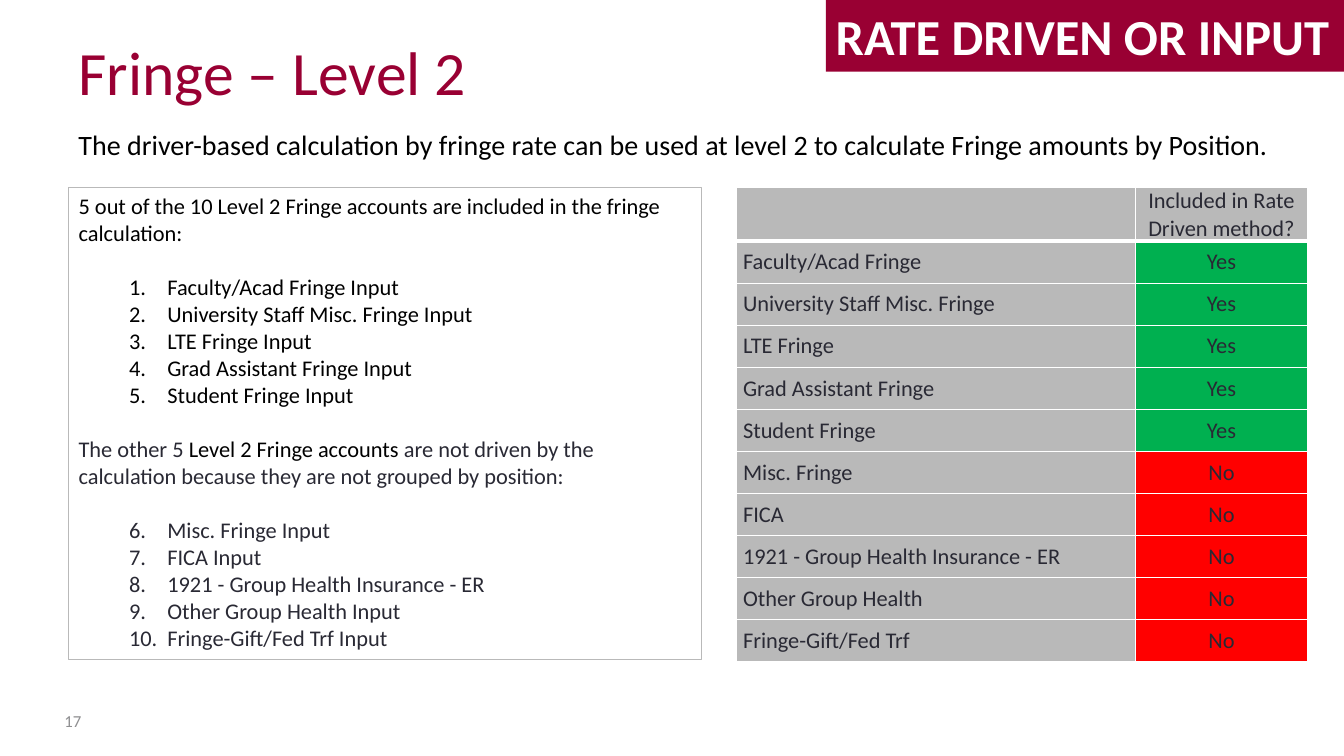
import pptx
import pptx.util
from dataclasses import dataclass
from lxml import etree
from pptx.dml.color import RGBColor
from pptx.enum.shapes import MSO_SHAPE
from pptx.enum.text import MSO_ANCHOR, MSO_AUTO_SIZE, PP_ALIGN
from pptx.oxml.ns import qn
from pptx.util import Inches, Pt


@dataclass(frozen=True)
class Theme:
    font: str = "Calibri"
    maroon: str = "990033"
    black: str = "000000"
    ink: str = "292934"
    gray: str = "B9B9B9"
    muted: str = "8E8E90"
    white: str = "FFFFFF"
    yes: str = "00B050"
    no: str = "FF0000"
    title: int = 44
    banner: int = 36
    lead: int = 20
    body: int = 16
    footer: int = 12


theme = Theme()


def style(paragraph, size, color, bold=False):
    paragraph.font.name = theme.font
    paragraph.font.size = Pt(size)
    paragraph.font.bold = bold
    paragraph.font.color.rgb = RGBColor.from_string(color)


def add_cell_borders(cell, widths):
    """Draw white borders; widths maps lnL, lnR, lnT and lnB to points, in that order."""
    properties = cell._tc.get_or_add_tcPr()
    for position, (side, width) in enumerate(widths.items()):
        line = etree.Element(qn(f"a:{side}"), w=str(Pt(width)))
        fill = etree.SubElement(line, qn("a:solidFill"))
        etree.SubElement(fill, qn("a:srgbClr"), val=theme.white)
        properties.insert(position, line)


deck = pptx.Presentation()
deck.slide_width, deck.slide_height = Inches(13.33), Inches(7.5)
slide = deck.slides.add_slide(deck.slide_layouts[1])

# Title
title = slide.shapes.title
title.left, title.top, title.width, title.height = map(Inches, (0.68, 0.24, 5.41, 0.88))
title.text_frame.text = "Fringe – Level 2"
title.text_frame.vertical_anchor = MSO_ANCHOR.BOTTOM
title.text_frame.paragraphs[0].alignment = PP_ALIGN.LEFT
style(title.text_frame.paragraphs[0], theme.title, theme.maroon)

# Lead sentence and page number
lead_text = ("The driver-based calculation by fringe rate can be used at level 2 "
             "to calculate Fringe amounts by Position.")
for text, box, size, color, anchor in (
    (lead_text, (0.68, 1.22, 12.11, 0.44), theme.lead, theme.black, MSO_ANCHOR.TOP),
    ("17", (0.54, 6.95, 0.56, 0.4), theme.footer, theme.muted, MSO_ANCHOR.MIDDLE),
):
    frame = slide.shapes.add_textbox(*map(Inches, box)).text_frame
    frame.word_wrap = True
    frame.vertical_anchor = anchor
    frame.text = text
    style(frame.paragraphs[0], size, color)

# Account lists
accounts = slide.placeholders[1]
accounts.left, accounts.top, accounts.width, accounts.height = map(Inches, (0.68, 1.86, 6.28, 4.68))
accounts.line.color.rgb = RGBColor.from_string(theme.gray)
accounts.line.width = Pt(0.75)
account_frame = accounts.text_frame
account_frame.auto_size = MSO_AUTO_SIZE.NONE
account_frame.vertical_anchor = MSO_ANCHOR.TOP

included_intro = [("5 out of the 10 Level 2 Fringe accounts are included in the fringe calculation:",
                   theme.black)]
excluded_intro = [("The other 5 ", theme.ink),
                  ("Level 2 Fringe accounts", theme.black),
                  (" are not driven by the calculation because they are not grouped by position:",
                   theme.ink)]
included = ["Faculty/Acad Fringe Input", "University Staff Misc. Fringe Input", "LTE Fringe Input",
            "Grad Assistant Fringe Input", "Student Fringe Input"]
excluded = ["Misc. Fringe Input", "FICA Input", "1921 - Group Health Insurance - ER",
            "Other Group Health Input", "Fringe-Gift/Fed Trf Input"]
line_gap = Pt(19.5)

for intro, names, first_number, color in (
    (included_intro, included, 1, theme.black),
    (excluded_intro, excluded, 6, theme.ink),
):
    if first_number == 1:
        heading = account_frame.paragraphs[0]
    else:
        heading = account_frame.add_paragraph()
    properties = heading._p.get_or_add_pPr()
    properties.set("marL", "0")
    properties.set("indent", "0")
    etree.SubElement(properties, qn("a:buNone"))
    heading.space_before = Pt(0) if first_number == 1 else line_gap
    style(heading, theme.body, color)
    for text, run_color in intro:
        run = heading.add_run()
        run.text = text
        if run_color != color:
            run.font.color.rgb = RGBColor.from_string(run_color)

    for index, name in enumerate(names):
        item = account_frame.add_paragraph()
        item.text = name
        item.level = 1
        properties = item._p.get_or_add_pPr()
        properties.set("marL", str(Inches(0.88)))
        properties.set("indent", str(Inches(-0.38)))
        etree.SubElement(properties, qn("a:buFont"), typeface="+mj-lt")
        etree.SubElement(properties, qn("a:buAutoNum"), type="arabicPeriod", startAt=str(first_number))
        item.space_before = line_gap if index == 0 else Pt(0)
        style(item, theme.body, color)

# Rate-driven table
rows = [("", "Included in Rate Driven method?")]
rows += [(name.removesuffix(" Input"), "Yes") for name in included]
rows += [(name.removesuffix(" Input"), "No") for name in excluded]
answer_fills = {"Yes": theme.yes, "No": theme.no}

table = slide.shapes.add_table(len(rows), 2, *map(Inches, (7.3, 1.86, 5.67, 4.69))).table
table.first_row = table.horz_banding = False
table.columns[0].width, table.columns[1].width = Inches(3.96), Inches(1.71)
for row_index, row in enumerate(rows):
    table.rows[row_index].height = Inches(0.52) if row_index == 0 else Inches(4.17 / 10)
    for column_index, text in enumerate(row):
        cell = table.cell(row_index, column_index)
        cell.text = text
        cell.vertical_anchor = MSO_ANCHOR.MIDDLE
        cell.margin_left = cell.margin_right = Inches(0.07)
        cell.margin_top = cell.margin_bottom = 0
        cell.fill.solid()
        cell.fill.fore_color.rgb = RGBColor.from_string(answer_fills.get(text, theme.gray))
        add_cell_borders(cell, {"lnL": 1, "lnR": 1,
                                "lnT": 3 if row_index == 1 else 1,
                                "lnB": 3 if row_index == 0 else 1})
        paragraph = cell.text_frame.paragraphs[0]
        paragraph.alignment = PP_ALIGN.CENTER if column_index == 1 else PP_ALIGN.LEFT
        style(paragraph, theme.body, theme.ink)

# Corner banner
banner = slide.shapes.add_shape(MSO_SHAPE.RECTANGLE, *map(Inches, (8.19, 0, 5.15, 0.71)))
banner.shadow.inherit = False
banner.fill.solid()
banner.fill.fore_color.rgb = RGBColor.from_string(theme.maroon)
banner.line.fill.background()
banner.text_frame.word_wrap = False
banner.text_frame.text = "RATE DRIVEN OR INPUT"
banner.text_frame.paragraphs[0].alignment = PP_ALIGN.LEFT
style(banner.text_frame.paragraphs[0], theme.banner, theme.white, bold=True)

deck.save("out.pptx")
